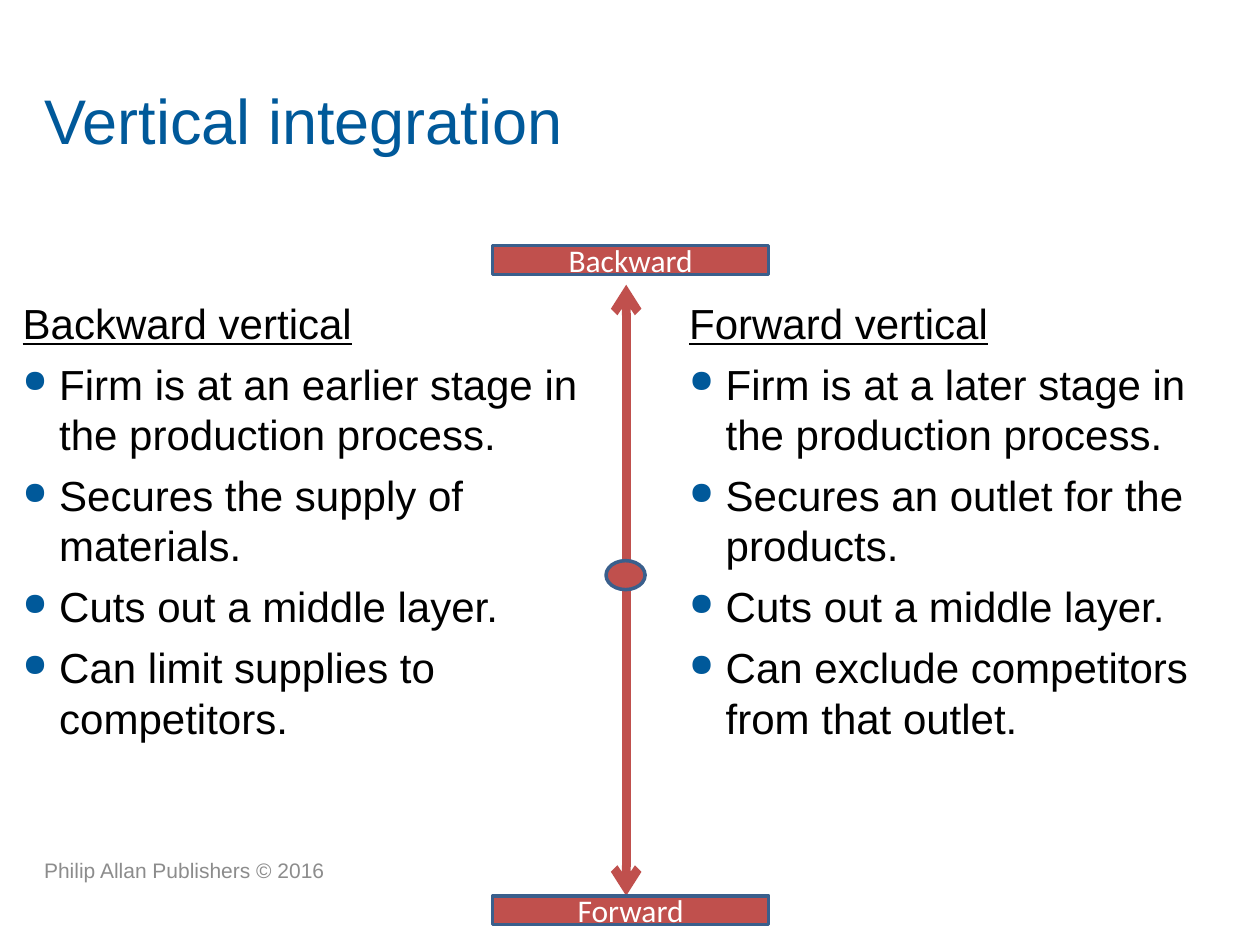
from lxml import etree
from pptx import Presentation
from pptx.dml.color import RGBColor
from pptx.enum import shapes, text
from pptx.oxml import ns
from pptx.util import Inches, Pt

BLUE = RGBColor(0x00, 0x59, 0x9A)
BLACK = RGBColor(0x00, 0x00, 0x00)
WHITE = RGBColor(0xFF, 0xFF, 0xFF)
GREY = RGBColor(0x8C, 0x8C, 0x8C)
RED = RGBColor(0xC0, 0x50, 0x4D)
OUTLINE = RGBColor(0x3A, 0x5F, 0x8C)

TITLE_FONT = {"name": "Arial", "size": Pt(36), "color": BLUE}
HEADING_FONT = {"name": "Arial", "size": Pt(24), "color": BLACK, "underline": True}
POINT_FONT = {**HEADING_FONT, "underline": False}
LABEL_FONT = {"name": "Calibri", "size": Pt(18), "color": WHITE}
FOOTER_FONT = {"name": "Arial", "size": Pt(12), "color": GREY}

BACKWARD_POINTS = [
    "Firm is at an earlier stage in the production process.",
    "Secures the supply of materials.",
    "Cuts out a middle layer.",
    "Can limit supplies to competitors.",
]
FORWARD_POINTS = [
    "Firm is at a later stage in the production process.",
    "Secures an outlet for the products.",
    "Cuts out a middle layer.",
    "Can exclude competitors from that outlet.",
]


def write(paragraph, wording, font):
    run = paragraph.add_run()
    run.text = wording
    for key, value in font.items():
        if key == "color":
            run.font.color.rgb = value
        else:
            setattr(run.font, key, value)


def add_frame(slide, place, anchor):
    frame = slide.shapes.add_textbox(*map(Inches, place)).text_frame
    settings = {"word_wrap": True, "vertical_anchor": anchor, "margin_left": 0,
                "margin_right": 0, "margin_top": 0, "margin_bottom": 0}
    for key, value in settings.items():
        setattr(frame, key, value)
    return frame


def add_line_of_text(slide, place, wording, font):
    frame = add_frame(slide, place, text.MSO_ANCHOR.MIDDLE)
    write(frame.paragraphs[0], wording, font)


def add_bullet(paragraph):
    properties = paragraph._p.get_or_add_pPr()
    properties.set("marL", str(Inches(0.29)))
    properties.set("indent", str(-Inches(0.29)))
    color = etree.SubElement(properties, ns.qn("a:buClr"))
    etree.SubElement(color, ns.qn("a:srgbClr"), val=str(BLUE))
    etree.SubElement(properties, ns.qn("a:buSzPct"), val="75000")
    etree.SubElement(properties, ns.qn("a:buChar"), char="●")


def add_column(slide, place, heading, points):
    frame = add_frame(slide, place, text.MSO_ANCHOR.TOP)
    write(frame.paragraphs[0], heading, HEADING_FONT)
    for point in points:
        paragraph = frame.add_paragraph()
        add_bullet(paragraph)
        paragraph.space_before = Pt(6)
        write(paragraph, point, POINT_FONT)


def add_axis(slide, x, top, bottom):
    axis = slide.shapes.add_connector(
        shapes.MSO_CONNECTOR.STRAIGHT, *map(Inches, (x, top, x, bottom)))
    axis.line.color.rgb = RED
    axis.line.width = Pt(5)
    outline = axis.line._get_or_add_ln()
    for end in ("a:headEnd", "a:tailEnd"):
        etree.SubElement(outline, ns.qn(end), type="arrow")
    etree.SubElement(axis._element.spPr, ns.qn("a:effectLst"))


def add_marker(slide, kind, place, label=None):
    marker = slide.shapes.add_shape(kind, *map(Inches, place))
    marker.shadow.inherit = False
    marker.fill.solid()
    marker.fill.fore_color.rgb = RED
    marker.line.color.rgb = OUTLINE
    marker.line.width = Pt(2)
    if label:
        frame = marker.text_frame
        frame.vertical_anchor = text.MSO_ANCHOR.MIDDLE
        frame.paragraphs[0].alignment = text.PP_ALIGN.CENTER
        write(frame.paragraphs[0], label, LABEL_FONT)


def main():
    deck = Presentation()
    deck.slide_width, deck.slide_height = Inches(10), Inches(7.5)
    slide = deck.slides.add_slide(deck.slide_layouts[6])

    add_line_of_text(slide, (0.35, 0.3, 6.25, 1.3), "Vertical integration", TITLE_FONT)
    add_column(slide, (0.18, 2.36, 4.42, 4.95), "Backward vertical", BACKWARD_POINTS)
    add_column(slide, (5.47, 2.36, 4.33, 4.19), "Forward vertical", FORWARD_POINTS)

    add_axis(slide, 4.97, 2.26, 7.11)
    add_marker(slide, shapes.MSO_SHAPE.OVAL, (4.81, 4.45, 0.31, 0.23))
    for label, top in (("Backward", 1.95), ("Forward", 7.11)):
        add_marker(slide, shapes.MSO_SHAPE.RECTANGLE, (3.91, top, 2.19, 0.23), label)

    add_line_of_text(slide, (0.35, 6.6, 3.32, 0.61),
                     "Philip Allan Publishers © 2016", FOOTER_FONT)
    deck.save("out.pptx")


if __name__ == "__main__":
    main()
